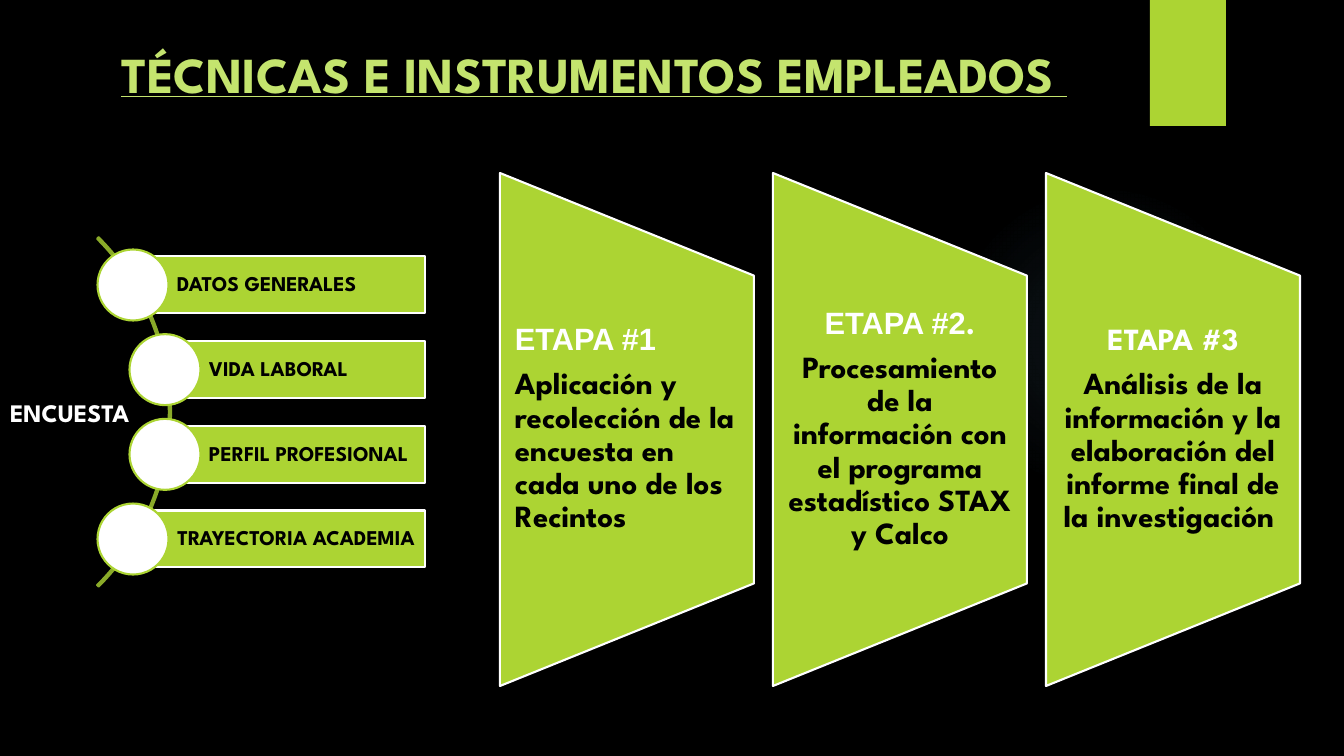
from lxml import etree
from pptx import Presentation
from pptx.dml.color import RGBColor
from pptx.enum.shapes import MSO_SHAPE as SHAPE
from pptx.enum.text import MSO_ANCHOR as ANCHOR, PP_ALIGN as ALIGN
from pptx.oxml import parse_xml
from pptx.oxml.ns import nsdecls
from pptx.util import Pt

EMU_PER_PX = 914400 / 100.8
LIME, PALE_LIME, OLIVE = "ACD433", "C4E46E", "8AAA29"
WHITE, BLACK, GLOW = "FFFFFF", "000000", "7AC4F0"
SPARTAN, ARIAL = "League Spartan", "Arial"

TOPICS = [
    ("DATOS GENERALES", 133, ALIGN.LEFT),
    ("VIDA LABORAL", 165, ALIGN.LEFT),
    ("PERFIL PROFESIONAL", 165, ALIGN.LEFT),
    ("TRAYECTORIA ACADEMIA ", 133, ALIGN.CENTER),
]
STAGES = [
    ([("ETAPA #1", ARIAL)], ALIGN.JUSTIFY, ALIGN.LEFT,
     "Aplicación y recolección de la encuesta en cada uno de los Recintos"),
    ([("ETAPA #2", ARIAL), (".", SPARTAN)], ALIGN.CENTER, ALIGN.CENTER,
     "Procesamiento de la información con el programa estadístico STAX y Calco"),
    ([("ETAPA #3", SPARTAN)], ALIGN.CENTER, ALIGN.CENTER,
     "Análisis de la información y la elaboración del informe final "
     "de la investigación "),
]


def px(n):
    return round(n * EMU_PER_PX)


def rgb(color):
    return RGBColor.from_string(color)


def add_shape(s, kind, x, y, w, h, fill=None, line=None):
    sp = s.shapes.add_shape(kind, px(x), px(y), px(w), px(h))
    sp.shadow.inherit = False
    if fill:
        sp.fill.solid()
        sp.fill.fore_color.rgb = rgb(fill)
    else:
        sp.fill.background()
    if line:
        sp.line.color.rgb = rgb(line)
        sp.line.width = Pt(1.5)
    else:
        sp.line.fill.background()
    return sp


def set_frame(tf, left=10, top=5, right=10, bottom=5, anchor=ANCHOR.MIDDLE):
    tf.word_wrap = True
    tf.vertical_anchor = anchor
    tf.margin_left, tf.margin_right = px(left), px(right)
    tf.margin_top, tf.margin_bottom = px(top), px(bottom)


def add_run(p, text, size, color, font=SPARTAN):
    r = p.add_run()
    r.text = text
    r.font.size, r.font.bold, r.font.name = Pt(size), True, font
    r.font.color.rgb = rgb(color)
    return r


def add_glow(s, x, y, d):
    sp = add_shape(s, SHAPE.OVAL, x, y, d, d, fill=GLOW)
    stops = "".join(
        f'<a:gs pos="{pos}000"><a:srgbClr val="{GLOW}">'
        f'<a:alpha val="{alpha}000"/></a:srgbClr></a:gs>'
        for pos, alpha in ((0, 7), (36, 6), (69, 0)))
    gradient = parse_xml(
        f'<a:gradFill {nsdecls("a")}><a:gsLst>{stops}</a:gsLst><a:path path="circle">'
        '<a:fillToRect l="50000" t="50000" r="50000" b="50000"/></a:path></a:gradFill>')
    solid = next(e for e in sp.element.spPr if etree.QName(e).localname == "solidFill")
    sp.element.spPr.replace(solid, gradient)


def add_title(s, x, y, w, h):
    title = s.shapes.title
    title.left, title.top, title.width, title.height = px(x), px(y), px(w), px(h)
    set_frame(title.text_frame)
    p = title.text_frame.paragraphs[0]
    p.alignment = ALIGN.CENTER
    add_run(p, "TÉCNICAS E INSTRUMENTOS EMPLEADOS ", 36, PALE_LIME).font.underline = True


def add_stage(s, x, y, w, h, stage):
    """Trapezoid turned on its side, with its heading and text in the middle."""
    heading, heading_align, body_align, body = stage
    sp = add_shape(s, SHAPE.FLOWCHART_MANUAL_OPERATION,
                   x + (w - h) / 2, y + (h - w) / 2, h, w, LIME, WHITE)
    sp.rotation = 270
    box = s.shapes.add_textbox(px(x), px(y + h / 5), px(w), px(h * 3 / 5))
    tf = box.text_frame
    set_frame(tf, 15, 0, 15, 0)
    p = tf.paragraphs[0]
    p.alignment = heading_align
    for text, font in heading:
        add_run(p, text, 22, WHITE, font)
    p = tf.add_paragraph()
    p.alignment = body_align
    add_run(p, body, 22, BLACK)
    for p in tf.paragraphs:
        p.line_spacing, p.space_after = 0.9, Pt(7.7)


def add_survey(s, x, y, w, h):
    """Arc with one dot and one bar per topic, and the survey label."""
    arc_size, bar_h, dot, pitch = 494, 57, 71, 84.67
    arc = add_shape(s, SHAPE.BLOCK_ARC, x - 323, y + (h - arc_size) / 2,
                    arc_size, arc_size, line=OLIVE)
    for i, value in enumerate((189, 27, 0.0044)):
        arc.adjustments[i] = value
    first = y + (h - pitch * (len(TOPICS) - 1)) / 2
    for i, (text, offset, align) in enumerate(TOPICS):
        middle = first + i * pitch
        bar = add_shape(s, SHAPE.RECTANGLE, x + offset, middle - bar_h / 2,
                        w - offset, bar_h, LIME, WHITE)
        set_frame(bar.text_frame, 44, 4, 4, 4)
        p = bar.text_frame.paragraphs[0]
        p.alignment, p.line_spacing = align, 0.9
        add_run(p, text, 15, BLACK)
        add_shape(s, SHAPE.OVAL, x + offset - dot / 2, middle - dot / 2,
                  dot, dot, WHITE, LIME)
    label = s.shapes.add_textbox(px(x), px(y + h / 2 - 20), px(183), px(40))
    set_frame(label.text_frame, anchor=ANCHOR.TOP)
    add_run(label.text_frame.paragraphs[0], "ENCUESTA", 18, WHITE)


def main():
    prs = Presentation()
    prs.slide_width, prs.slide_height = px(1344), px(756)
    s = prs.slides.add_slide(prs.slide_layouts[5])
    s.background.fill.solid()
    s.background.fill.fore_color.rgb = rgb(BLACK)
    add_glow(s, 949, 184, 310)
    add_shape(s, SHAPE.RECTANGLE, 1150, 0, 76, 126, LIME)
    for i, stage in enumerate(STAGES):
        add_stage(s, 500 + 273 * i, 173, 254, 513, stage)
    add_title(s, 76, 33, 1037, 81)
    add_survey(s, 0, 238, 425, 348)
    prs.save("out.pptx")


if __name__ == "__main__":
    main()
